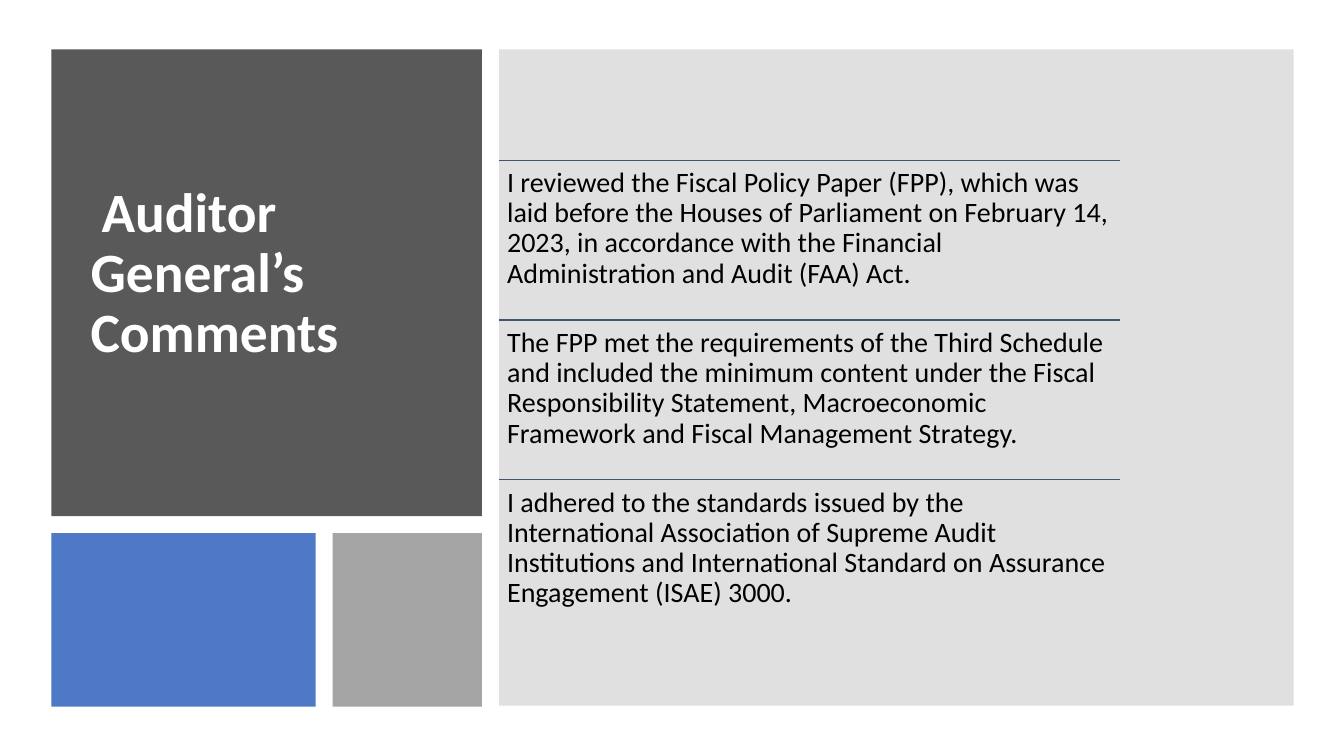
from lxml.etree import SubElement
from pptx import Presentation
from pptx.dml.color import RGBColor
from pptx.enum.shapes import MSO_CONNECTOR, MSO_SHAPE
from pptx.enum.text import MSO_ANCHOR
from pptx.oxml.ns import qn
from pptx.util import Inches, Pt

FONT = "Calibri"
TITLE = "Auditor General’s Comments"
COMMENTS = [
    "I reviewed the Fiscal Policy Paper (FPP), which was laid before the Houses "
    "of Parliament on February 14, 2023, in accordance with the Financial "
    "Administration and Audit (FAA) Act.",
    "The FPP met the requirements of the Third Schedule and included the minimum "
    "content under the Fiscal Responsibility Statement, Macroeconomic Framework "
    "and Fiscal Management Strategy.",
    "I adhered to the standards issued by the International Association of "
    "Supreme Audit Institutions and International Standard on Assurance "
    "Engagement (ISAE) 3000.",
]


def rgb(value):
    return RGBColor.from_string(value)


def add_block(slide, box, color, opacity=100):
    sp = slide.shapes.add_shape(MSO_SHAPE.RECTANGLE, *map(Inches, box))
    sp.shadow.inherit = False
    sp.fill.solid()
    sp.fill.fore_color.rgb = rgb(color)
    sp.line.fill.background()
    if opacity < 100:
        clr = sp._element.spPr.find(qn("a:solidFill"))[0]
        SubElement(clr, qn("a:alpha"), val=str(opacity * 1000))


def add_text(slide, box, text, size, color, inset, bold=False,
             anchor=MSO_ANCHOR.TOP):
    tf = slide.shapes.add_textbox(*map(Inches, box)).text_frame
    tf.word_wrap = True
    tf.vertical_anchor = anchor
    tf.margin_left = tf.margin_right = Inches(inset)
    tf.margin_top = tf.margin_bottom = Inches(inset)
    p = tf.paragraphs[0]
    p.line_spacing = 0.9
    r = p.add_run()
    r.text = text
    r.font.name, r.font.size, r.font.bold = FONT, Pt(size), bold
    r.font.color.rgb = rgb(color)
    return p


def add_rule(slide, x, y, width):
    line = slide.shapes.add_connector(
        MSO_CONNECTOR.STRAIGHT, *map(Inches, (x, y, x + width, y)))
    line.line.color.rgb = rgb("44546A")
    line.line.width = Pt(1)
    SubElement(line._element.spPr, qn("a:effectLst"))


def title_panel(slide, x, y, w, h):
    add_block(slide, (x, y, w, h), "595959")
    p = add_text(slide, (x + 0.29, y + 0.68, w - 0.59, h - 1.52), TITLE, 39.6,
                 "FFFFFF", 0.1, bold=True, anchor=MSO_ANCHOR.MIDDLE)
    # The first line starts slightly further in
    p._p.get_or_add_pPr().set("indent", str(Inches(0.11)))


def accent_blocks(slide, x, y, w, h, gap):
    blue = 2.62
    add_block(slide, (x, y, blue, h), "4472C4", 95)
    add_block(slide, (x + blue + gap, y, w - blue - gap, h), "A5A5A5")


def comments_panel(slide, x, y, w, h):
    add_block(slide, (x, y, w, h), "7F7F7F", 24)
    top, pitch, width = y + 1.1, 1.585, 6.16
    for i, comment in enumerate(COMMENTS):
        row = top + i * pitch
        add_rule(slide, x, row, width)
        add_text(slide, (x, row, width, pitch), comment, 20, "000000", 0.08)


def main():
    prs = Presentation()
    prs.slide_width, prs.slide_height = Inches(13.33), Inches(7.5)
    slide = prs.slides.add_slide(prs.slide_layouts[6])

    # Left column, then the comments on the right
    left, top, column, gap = 0.51, 0.49, 4.27, 0.17
    title_h, accent_h = 4.63, 1.72
    title_panel(slide, left, top, column, title_h)
    accent_blocks(slide, left, top + title_h + gap, column, accent_h, gap)
    comments_panel(slide, left + column + gap, top, 7.88, 6.51)

    prs.save("out.pptx")


if __name__ == "__main__":
    main()
